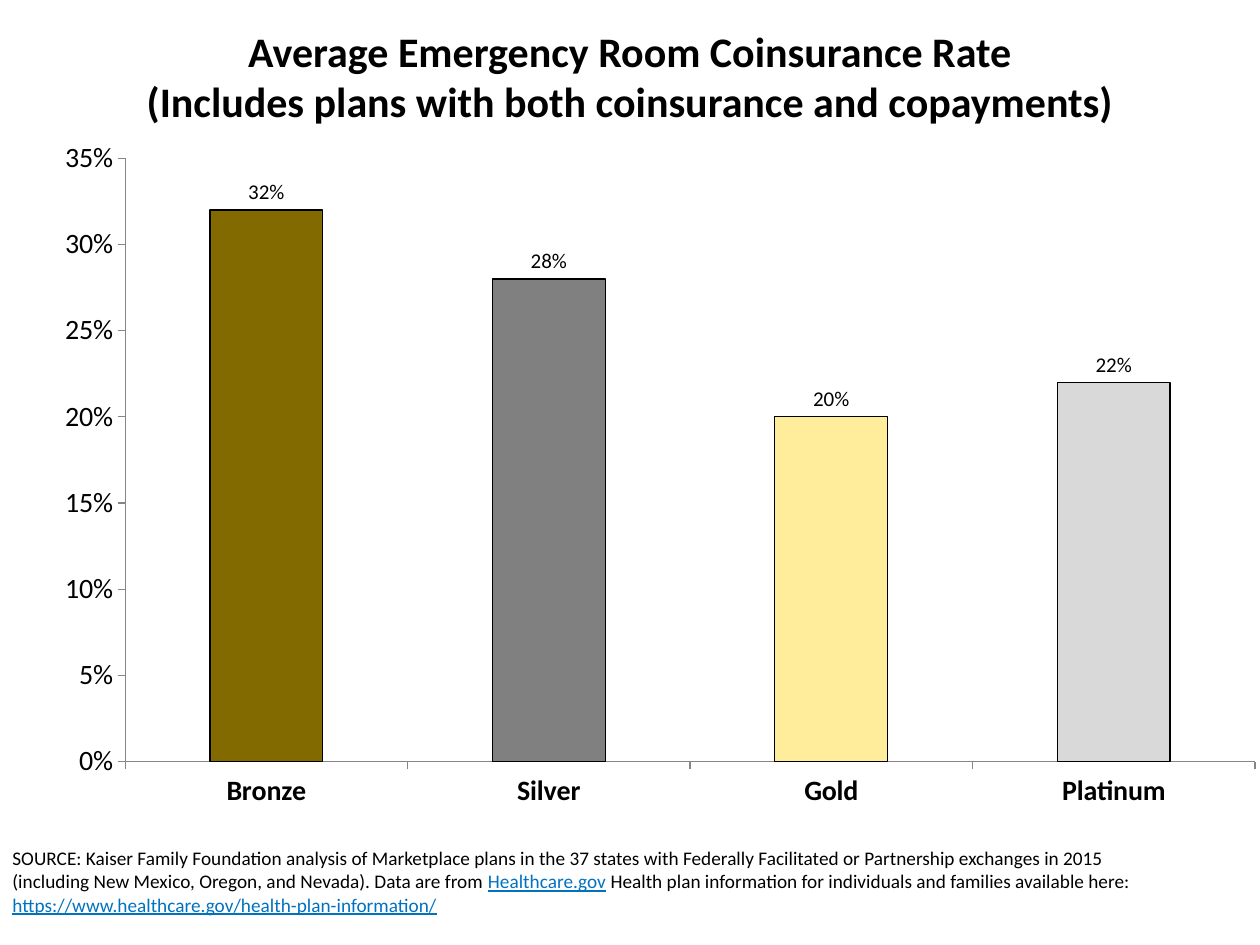
"""Build a slide charting average emergency room coinsurance by plan tier."""
from lxml.etree import SubElement
from pptx import Presentation
from pptx.chart.data import CategoryChartData
from pptx.dml.color import RGBColor
from pptx.enum.chart import XL_CHART_TYPE, XL_LABEL_POSITION, XL_TICK_MARK
from pptx.enum.text import MSO_ANCHOR, PP_ALIGN
from pptx.oxml.ns import qn
from pptx.util import Inches, Pt

BLACK = RGBColor(0x00, 0x00, 0x00)
LINK_BLUE = RGBColor(0x00, 0x72, 0xC0)
AXIS_GRAY = RGBColor(0x86, 0x86, 0x86)
TIERS = {
    "Bronze": (0.32, RGBColor(0x82, 0x6A, 0x00)),
    "Silver": (0.28, RGBColor(0x80, 0x80, 0x80)),
    "Gold": (0.20, RGBColor(0xFF, 0xED, 0x9B)),
    "Platinum": (0.22, RGBColor(0xD9, 0xD9, 0xD9)),
}
SOURCE_RUNS = [
    ("SOURCE: Kaiser Family Foundation analysis of Marketplace plans in the 37 states "
     "with Federally Facilitated or Partnership exchanges in 2015 (including New Mexico, "
     "Oregon, and Nevada). Data are from ", False),
    ("Healthcare.gov", True),
    (" Health plan information for individuals and families available here: ", False),
    ("https://www.healthcare.gov/health-plan-information/", True),
]
PLOT_AREA = {"x": 0.082, "y": 0.032, "w": 0.915, "h": 0.871}


def style_font(font, size, bold=False, color=BLACK):
    values = {"name": "Calibri", "size": Pt(size), "bold": bold}
    for attribute, value in values.items():
        setattr(font, attribute, value)
    font.color.rgb = color


def place(part, left, top, width, height):
    box = {"left": left, "top": top, "width": width, "height": height}
    for attribute, value in box.items():
        setattr(part, attribute, Inches(value))


deck = Presentation()
deck.slide_width, deck.slide_height = Inches(10), Inches(7.5)
slide = deck.slides.add_slide(deck.slide_layouts[5])

headline = slide.shapes.title
place(headline, 0.1, 0.1, 9.8, 1)
headline.text_frame.text = (
    "Average Emergency Room Coinsurance Rate\v"
    "(Includes plans with both coinsurance and copayments)"
)
headline.text_frame.vertical_anchor = MSO_ANCHOR.MIDDLE
headline_line = headline.text_frame.paragraphs[0]
headline_line.alignment = PP_ALIGN.CENTER
for run in headline_line.runs:
    style_font(run.font, 24, bold=True)

source_note = slide.shapes.add_textbox(0, 0, 0, 0)
place(source_note, 0, 6.67, 9.25, 0.84)
source_note.text_frame.word_wrap = True
for wording, is_address in SOURCE_RUNS:
    run = source_note.text_frame.paragraphs[0].add_run()
    run.text = wording
    style_font(run.font, 11, color=LINK_BLUE if is_address else BLACK)
    run.font.underline = is_address

rates = CategoryChartData(number_format="0%")
rates.categories = list(TIERS)
rates.add_series("Series 1", [rate for rate, color in TIERS.values()])
rate_frame = slide.shapes.add_chart(XL_CHART_TYPE.COLUMN_CLUSTERED, 0, 0, 0, 0, rates)
place(rate_frame, 0.19, 1.08, 9.8, 5.5)
rate_chart = rate_frame.chart
rate_chart.has_legend = rate_chart.has_title = False
style_font(rate_chart.font, 16)

rate_axis, tier_axis = rate_chart.value_axis, rate_chart.category_axis
for axis, bold in ((rate_axis, False), (tier_axis, True)):
    axis.has_major_gridlines = False
    axis.major_tick_mark = XL_TICK_MARK.OUTSIDE
    axis.format.line.color.rgb = AXIS_GRAY
    axis.format.line.width = Pt(0.75)
    style_font(axis.tick_labels.font, 16, bold=bold)
rate_scale = {"minimum_scale": 0, "maximum_scale": 0.35, "major_unit": 0.05}
for attribute, value in rate_scale.items():
    setattr(rate_axis, attribute, value)
rate_axis.tick_labels.number_format = "0%"
rate_axis.tick_labels.number_format_is_linked = False

bars = rate_chart.plots[0]
bars.gap_width = 150
bars.vary_by_categories = False
bars.has_data_labels = True
label_format = {
    "show_value": True,
    "number_format": "0%",
    "number_format_is_linked": False,
    "position": XL_LABEL_POSITION.OUTSIDE_END,
}
for attribute, value in label_format.items():
    setattr(bars.data_labels, attribute, value)
style_font(bars.data_labels.font, 12)
for index, (rate, color) in enumerate(TIERS.values()):
    bar = bars.series[0].points[index].format
    bar.fill.solid()
    bar.fill.fore_color.rgb = color
    bar.line.color.rgb = BLACK
    bar.line.width = Pt(0.75)

plot_area = rate_chart._chartSpace.chart.plotArea
for old_layout in plot_area.findall(qn("c:layout")):
    plot_area.remove(old_layout)
layout = SubElement(plot_area, qn("c:layout"))
plot_area.insert(0, layout)
manual = SubElement(layout, qn("c:manualLayout"))
settings = {"layoutTarget": "inner", "xMode": "edge", "yMode": "edge", **PLOT_AREA}
for tag, value in settings.items():
    SubElement(manual, qn(f"c:{tag}")).set("val", str(value))

deck.save("out.pptx")
